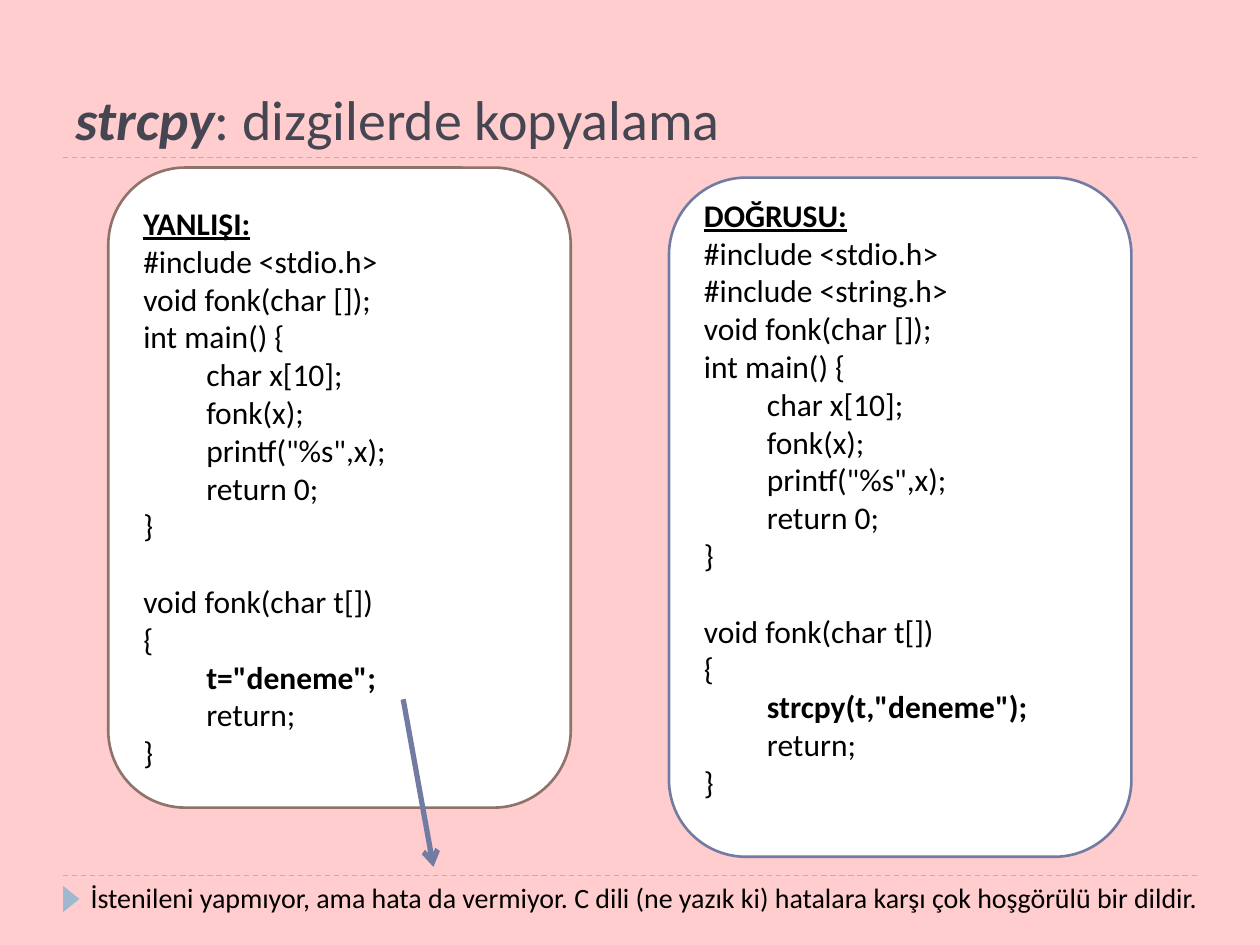
from lxml import etree
from pptx import Presentation
from pptx.dml.color import RGBColor
from pptx.enum.dml import MSO_LINE
from pptx.enum.shapes import MSO_CONNECTOR, MSO_SHAPE
from pptx.enum.text import MSO_ANCHOR, PP_ALIGN
from pptx.oxml.ns import qn
from pptx.util import Inches, Pt

STRAIGHT = MSO_CONNECTOR.STRAIGHT
DASH = MSO_LINE.DASH
ROUNDED, TRIANGLE = MSO_SHAPE.ROUNDED_RECTANGLE, MSO_SHAPE.ISOSCELES_TRIANGLE
LEFT = PP_ALIGN.LEFT
MIDDLE, BOTTOM, TOP = MSO_ANCHOR.MIDDLE, MSO_ANCHOR.BOTTOM, MSO_ANCHOR.TOP

FONT = "Calibri"
COLORS = {
    "background": "FFCDCD", "title": "464653", "text": "000000", "panel": "FFFFFF",
    "wrong": "8E736A", "right": "727CA3", "rule": "9FB8CD",
}

# Content
TITLE_TERM, TITLE_REST = "strcpy", ": dizgilerde kopyalama"
NOTE = ("İstenileni yapmıyor, ama hata da vermiyor. "
        "C dili (ne yazık ki) hatalara karşı çok hoşgörülü bir dildir.")
MAIN = ["void fonk(char []);", "int main() {", "\tchar x[10];", "\tfonk(x);",
        '\tprintf("%s",x);', "\treturn 0;", "}"]
FUNCTION = "void fonk(char t[])"
PANELS = [
    {"heading": "YANLIŞI:", "includes": ["#include <stdio.h>"],
     "key": 't="deneme";', "color": "wrong",
     "box": (0.86, 1.33, 3.67, 5.08), "bottom": 0.05},
    {"heading": "DOĞRUSU:", "includes": ["#include <stdio.h>", "#include <string.h>"],
     "key": 'strcpy(t,"deneme");', "color": "right",
     "box": (5.31, 1.41, 3.67, 5.39), "bottom": 0.35},
]
RULES_Y = [6.95, 1.25]


def rgb(name):
    return RGBColor.from_string(COLORS[name])


def set_font(font, size, color="text"):
    font.name, font.size = FONT, Pt(size)
    font.color.rgb = rgb(color)


def add_line(slide, start, end, color, width):
    line = slide.shapes.add_connector(STRAIGHT, *map(Inches, start + end))
    line.line.color.rgb = rgb(color)
    line.line.width = Pt(width)
    etree.SubElement(line._element.spPr, qn("a:effectLst"))
    return line


def add_text(slide, box, anchor, wrap):
    tf = slide.shapes.add_textbox(*map(Inches, box)).text_frame
    tf.word_wrap, tf.vertical_anchor = wrap, anchor
    return tf.paragraphs[0]


def add_panel(slide, panel):
    sp = slide.shapes.add_shape(ROUNDED, *map(Inches, panel["box"]))
    sp.shadow.inherit = False
    sp.fill.solid()
    sp.fill.fore_color.rgb = rgb("panel")
    sp.line.color.rgb = rgb(panel["color"])
    sp.line.width = Pt(1.5)
    tf = sp.text_frame
    tf.word_wrap, tf.vertical_anchor = True, MIDDLE
    tf.margin_bottom = Inches(panel["bottom"])

    key = "\t" + panel["key"]
    lines = [panel["heading"], *panel["includes"], *MAIN,
             FUNCTION, "{", key, "\treturn;", "}"]
    for i, text in enumerate(lines):
        p = tf.paragraphs[0] if i == 0 else tf.add_paragraph()
        p.alignment = LEFT
        p.add_run().text = text
        set_font(p.font, 18)
        p.font.bold = text in (panel["heading"], key)
        p.font.underline = text == panel["heading"]
        if text == FUNCTION:
            p.space_before = Pt(21.6)


prs = Presentation()
prs.slide_width, prs.slide_height = Inches(10), Inches(7.5)
s = prs.slides.add_slide(prs.slide_layouts[6])
s.background.fill.solid()
s.background.fill.fore_color.rgb = rgb("background")

# Dashed rules and the note's marker
for y in RULES_Y:
    add_line(s, (0.5, y), (9.5, y), "rule", 0.75).line.dash_style = DASH
marker = s.shapes.add_shape(TRIANGLE, *map(Inches, (0.46, 7.07, 0.21, 0.13)))
marker.rotation = 90
marker.shadow.inherit = False
marker.fill.solid()
marker.fill.fore_color.rgb = rgb("rule")
marker.line.fill.background()

# Title
p = add_text(s, (0.5, 0.17, 9, 1.08), BOTTOM, True)
set_font(p.font, 32, "title")
term = p.add_run()
term.text = TITLE_TERM
term.font.bold = term.font.italic = True
p.add_run().text = TITLE_REST

# Code panels
for panel in PANELS:
    add_panel(s, panel)

# Arrow from the faulty line to the note
arrow = add_line(s, (3.2, 5.55), (3.44, 6.88), "right", 3)
etree.SubElement(arrow.line._get_or_add_ln(), qn("a:tailEnd"), type="arrow")

# Note
p = add_text(s, (0.62, 6.94, 9.08, 0.37), TOP, False)
p.add_run().text = NOTE
set_font(p.font, 16)

prs.save("out.pptx")
